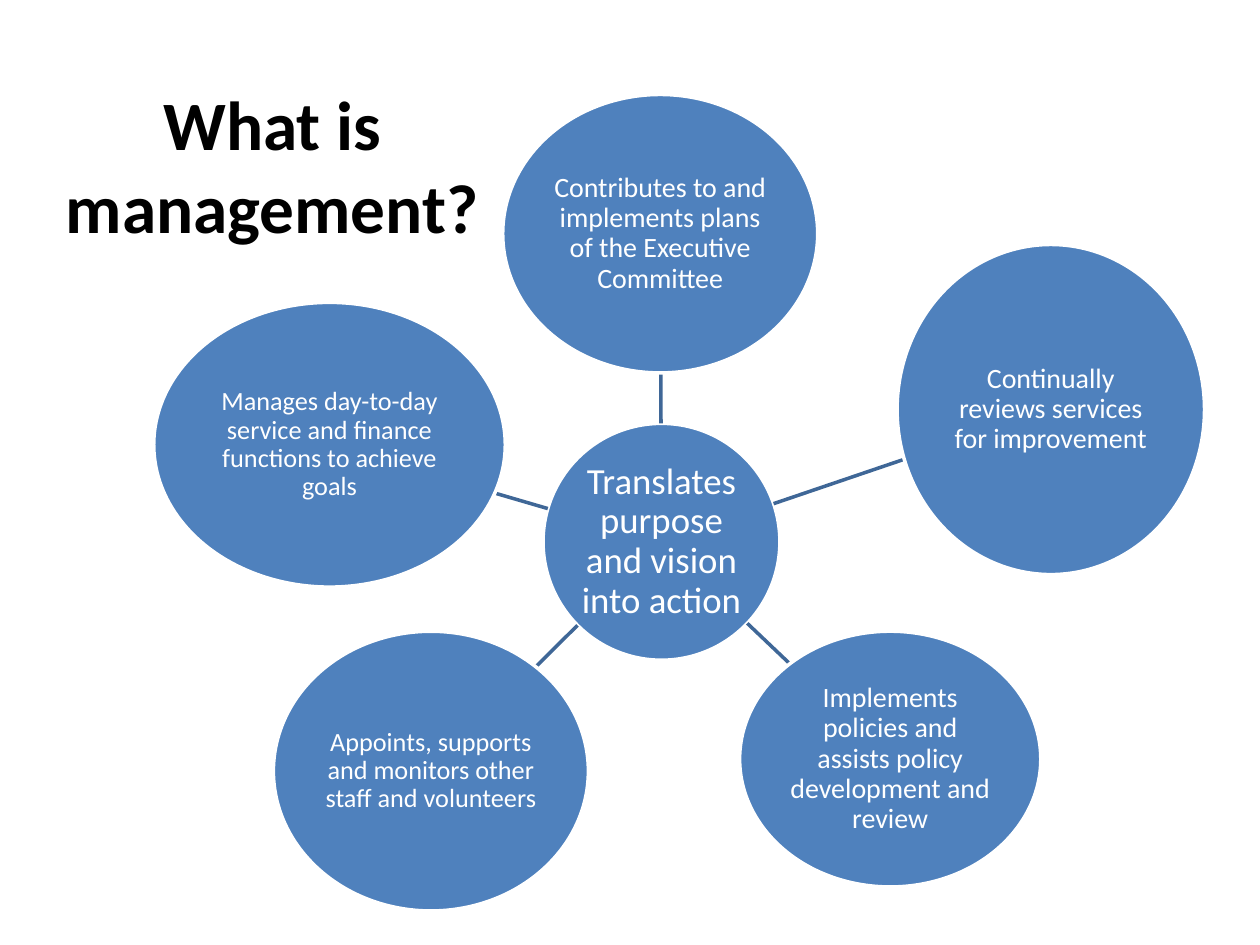
"""Build a hub-and-spoke slide that explains what management is."""
from math import hypot

from lxml.etree import SubElement
from pptx import Presentation
from pptx.dml.color import RGBColor
from pptx.enum.shapes import MSO_CONNECTOR, MSO_SHAPE
from pptx.enum.text import MSO_ANCHOR, PP_ALIGN
from pptx.oxml.ns import qn
from pptx.util import Inches, Pt

BLACK = RGBColor(0x00, 0x00, 0x00)
WHITE = RGBColor(0xFF, 0xFF, 0xFF)
BLUE = RGBColor(0x4F, 0x81, 0xBD)
DARK_BLUE = RGBColor(0x3F, 0x67, 0x97)

FONT = "Calibri"
TITLE = "What is management?"
TITLE_BOX = (0.35, 0.36, 3.62, 1.89)

HUB = ("Translates purpose and vision into action", 21, (4.31, 3.36, 1.88, 1.88))
ROLES = [
    ("Contributes to and implements plans of the Executive Committee", 16,
     (3.99, 0.75, 2.5, 2.21)),
    ("Continually reviews services for improvement", 16,
     (7.12, 1.94, 2.44, 2.62)),
    ("Implements policies and assists policy development and review", 16,
     (5.87, 5.01, 2.39, 2.03)),
    ("Appoints, supports and monitors other staff and volunteers", 15,
     (2.17, 5.01, 2.5, 2.22)),
    ("Manages day-to-day service and finance functions to achieve goals", 15,
     (1.22, 2.4, 2.79, 2.26)),
]


def write_text(shape, text, size, color, bold=False):
    frame = shape.text_frame
    frame.word_wrap = True
    frame.vertical_anchor = MSO_ANCHOR.MIDDLE
    para = frame.paragraphs[0]
    para.text = text
    para.alignment = PP_ALIGN.CENTER
    para.font.name = FONT
    para.font.size = Pt(size)
    para.font.bold = bold
    para.font.color.rgb = color
    return frame


def add_circle(page, text, size, bounds):
    circle = page.shapes.add_shape(MSO_SHAPE.OVAL, *map(Inches, bounds))
    circle.shadow.inherit = False
    circle.fill.solid()
    circle.fill.fore_color.rgb = BLUE
    circle.line.color.rgb = WHITE
    circle.line.width = Pt(2)
    frame = write_text(circle, text, size, WHITE)
    frame.margin_left = frame.margin_right = Inches(0.01)
    frame.margin_top = frame.margin_bottom = Inches(0.01)
    frame.paragraphs[0].line_spacing = 0.9


def center_of(bounds):
    left, top, width, height = bounds
    return left + width / 2, top + height / 2


def edge_toward(bounds, target):
    x, y = center_of(bounds)
    across, down = target[0] - x, target[1] - y
    reach = 1 / hypot(across / (bounds[2] / 2), down / (bounds[3] / 2))
    return x + across * reach, y + down * reach


def add_spoke(page, hub, role):
    start = edge_toward(hub, center_of(role))
    end = edge_toward(role, center_of(hub))
    spoke = page.shapes.add_connector(
        MSO_CONNECTOR.STRAIGHT, *map(Inches, start + end))
    spoke.line.color.rgb = DARK_BLUE
    spoke.line.width = Pt(2)
    SubElement(spoke._element.spPr, qn("a:effectLst"))


def main():
    deck = Presentation()
    deck.slide_width, deck.slide_height = Inches(10), Inches(7.5)
    page = deck.slides.add_slide(deck.slide_layouts[6])
    title = page.shapes.add_textbox(*map(Inches, TITLE_BOX))
    write_text(title, TITLE, 39.6, BLACK, bold=True)
    add_circle(page, *HUB)
    for role in ROLES:
        add_spoke(page, HUB[2], role[2])
        add_circle(page, *role)
    deck.save("out.pptx")


if __name__ == "__main__":
    main()
